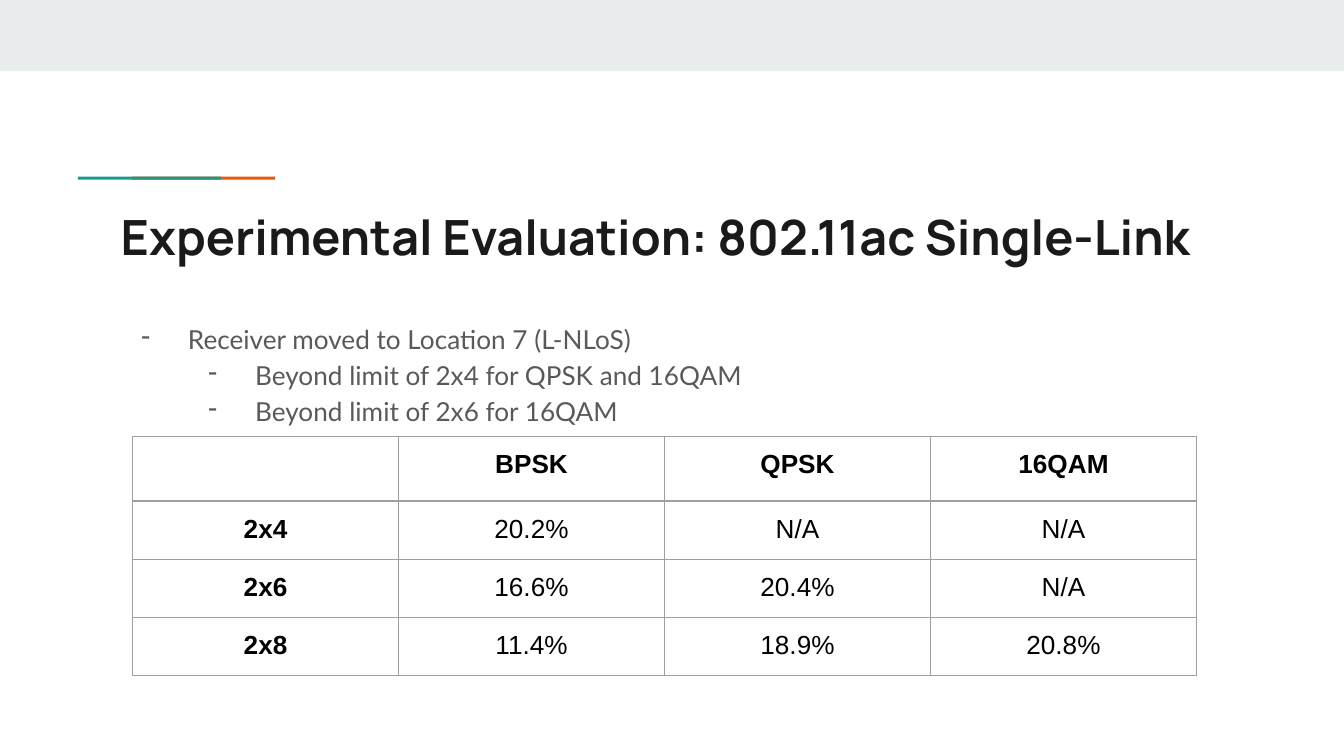
"""Build a slide on single-link results with a bullet list and a table."""
from lxml.etree import SubElement as Sub
from pptx import Presentation as Deck
from pptx.dml.color import RGBColor as Rgb
from pptx.enum.shapes import MSO_SHAPE as Kind
from pptx.enum.text import PP_ALIGN as Align
from pptx.oxml.ns import qn
from pptx.util import Pt

GREY = "595959"
NOTES = [
    (0, "Receiver moved to Location 7 (L-NLoS)"),
    (1, "Beyond limit of 2x4 for QPSK and 16QAM"),
    (1, "Beyond limit of 2x6 for 16QAM"),
]
RATES = [
    ["", "BPSK", "QPSK", "16QAM"],
    ["2x4", "20.2%", "N/A", "N/A"],
    ["2x6", "16.6%", "20.4%", "N/A"],
    ["2x8", "11.4%", "18.9%", "20.8%"],
]


def color(code):
    """Turn a hex string into a colour."""
    return Rgb.from_string(code)


def style(para, face, size, code, bold=False):
    """Set the font of a paragraph."""
    font = para.font
    font.name, font.size, font.bold = face, Pt(size), bold
    font.color.rgb = color(code)


def add_bar(slide, left, top, width, height, code):
    """Add a plain filled rectangle."""
    bar = slide.shapes.add_shape(
        Kind.RECTANGLE, Pt(left), Pt(top), Pt(width), Pt(height))
    bar.shadow.inherit = False
    bar.fill.solid()
    bar.fill.fore_color.rgb = color(code)
    bar.line.fill.background()


def add_box(slide, left, top, width, height):
    """Add an empty wrapping text box and return its frame."""
    box = slide.shapes.add_textbox(Pt(left), Pt(top), Pt(width), Pt(height))
    frame = box.text_frame
    frame.word_wrap = True
    frame.margin_left = frame.margin_right = Pt(7.2)
    frame.margin_top = frame.margin_bottom = Pt(7.2)
    return frame


def add_title(slide, text):
    """Add the slide title."""
    para = add_box(slide, 57.6, 103.5, 605.5, 42.5).paragraphs[0]
    para.text = text
    style(para, "Manrope", 26, "1A1A1A", True)


def add_notes(slide, notes):
    """Add the dashed list with its indented levels."""
    frame = add_box(slide, 57.6, 163.5, 414.5, 70.5)
    for i, (level, text) in enumerate(notes):
        para = frame.add_paragraph() if i else frame.paragraphs[0]
        para.text, para.level, para.line_spacing = text, level, 1.15
        props = para._p.get_or_add_pPr()
        props.set("marL", str(Pt(36 * (level + 1))))
        props.set("indent", str(Pt(-25)))
        tint = Sub(props, qn("a:buClr"))
        Sub(tint, qn("a:srgbClr"), val=GREY)
        Sub(props, qn("a:buChar"), char="-")
        style(para, "Lato", 14, GREY)


def edge(cell, code, width):
    """Draw all four borders of a cell."""
    props = cell._tc.get_or_add_tcPr()
    for side in "LRTB":
        line = Sub(props, qn(f"a:ln{side}"), w=str(Pt(width)))
        fill = Sub(line, qn("a:solidFill"))
        Sub(fill, qn("a:srgbClr"), val=code)


def add_grid(slide, rows, left, top, width, head, step):
    """Add a table whose first row and first column are bold."""
    shape = slide.shapes.add_table(
        len(rows), len(rows[0]), Pt(left), Pt(top),
        Pt(width * len(rows[0])), Pt(head + step * (len(rows) - 1)))
    table = shape.table
    for col in table.columns:
        col.width = Pt(width)
    for r, row in enumerate(rows):
        table.rows[r].height = Pt(step if r else head)
        for c, text in enumerate(row):
            cell = table.cell(r, c)
            edge(cell, "9E9E9E", 0.75)
            cell.fill.background()
            cell.margin_left = cell.margin_right = Pt(7.2)
            cell.margin_top = cell.margin_bottom = Pt(7.2)
            para = cell.text_frame.paragraphs[0]
            para.text, para.alignment = text, Align.CENTER
            style(para, "Arial", 14, "000000", r == 0 or c == 0)


def main():
    """Build and save the slide."""
    deck = Deck()
    deck.slide_width, deck.slide_height = Pt(720), Pt(405)
    slide = deck.slides.add_slide(deck.slide_layouts[6])
    add_bar(slide, 0, 0, 720, 38.2, "E9EDEE")
    add_bar(slide, 70.7, 94.6, 76.7, 1.7, "EB5600")
    add_bar(slide, 41.8, 94.6, 76.7, 1.7, "1A9988")
    add_title(slide, "Experimental Evaluation: 802.11ac Single-Link")
    add_notes(slide, NOTES)
    add_grid(slide, RATES, 71, 234, 142.5, 34.4, 30.2)
    deck.save("out.pptx")


if __name__ == "__main__":
    main()
